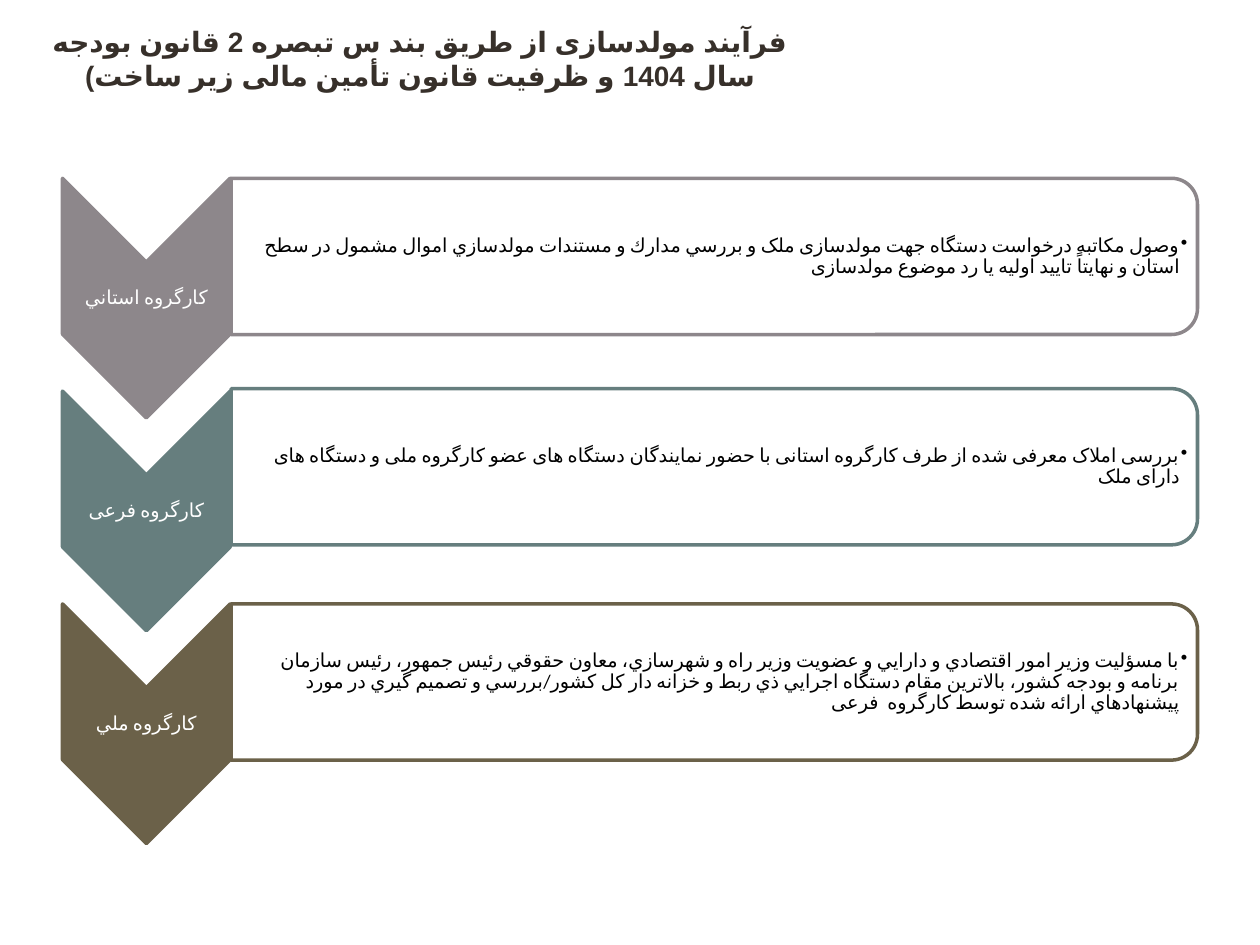
from lxml.etree import SubElement
from pptx import Presentation
from pptx.dml.color import RGBColor
from pptx.enum.lang import MSO_LANGUAGE_ID as Language
from pptx.enum.shapes import MSO_SHAPE as Shape
from pptx.enum.text import MSO_ANCHOR as Anchor, MSO_AUTO_SIZE as AutoSize, PP_ALIGN as Align
from pptx.oxml.ns import qn
from pptx.util import Cm, Pt

TITLE = "فرآیند مولدسازی از طریق بند س تبصره 2 قانون بودجه سال 1404 و ظرفیت قانون تأمین مالی زیر ساخت)"
STAGES = [
    ("كارگروه استاني", "8D878B", 5.17,
     "وصول مکاتبه درخواست دستگاه جهت مولدسازی ملک و بررسي مدارك و مستندات مولدسازي "
     "اموال مشمول در سطح استان و نهایتاً تایید اولیه یا رد موضوع مولدسازی"),
    ("کارگروه فرعی", "667E7E", 9.41,
     "بررسی املاک معرفی شده از طرف کارگروه استانی با حضور نمایندگان دستگاه های عضو "
     "کارگروه ملی و دستگاه های دارای ملک"),
    ("كارگروه ملي", "6B6149", 13.75,
     "با مسؤليت وزير امور اقتصادي و دارايي و عضويت وزير راه و شهرسازي، معاون حقوقي "
     "رئيس جمهور، رئيس سازمان برنامه و بودجه كشور، بالاترين مقام دستگاه اجرايي ذي ربط "
     "و خزانه دار كل كشور/بررسي و تصميم گيري در مورد پيشنهادهاي ارائه شده توسط كارگروه  فرعی"),
]
FIRST_CHEVRON_Y, CHEVRON_PITCH = 6.01, 4.29


def color(hex_value):
    """Turn a hex string into a colour."""
    return RGBColor.from_string(hex_value)


def centered(x, y, width, height):
    """Return the frame around a centre point given in centimetres."""
    return Cm(x - width / 2), Cm(y - height / 2), Cm(width), Cm(height)


def write_rtl(paragraph, text, font_name, size, hex_value, align, bold=False):
    """Write one right-to-left Persian run into a paragraph."""
    paragraph.alignment = align
    paragraph._p.get_or_add_pPr().set("rtl", "1")
    run = paragraph.add_run()
    run.text = text
    run.font.name = font_name
    run.font.size = Pt(size)
    run.font.bold = bold
    run.font.language_id = Language.FARSI
    run.font.color.rgb = color(hex_value)
    SubElement(run._r.get_or_add_rPr(), qn("a:cs"), typeface=font_name)


def add_bullet(paragraph):
    """Give a paragraph a hanging bullet."""
    properties = paragraph._p.get_or_add_pPr()
    properties.set("marL", str(Cm(0.16)))
    properties.set("indent", str(Cm(-0.16)))
    SubElement(properties, qn("a:buChar"), char="•")


def add_outline(group, preset, frame, fill, line, opacity=100):
    """Add a preset shape turned a quarter clockwise."""
    outline = group.shapes.add_shape(preset, *frame)
    outline.rotation = 90
    outline.shadow.inherit = False
    outline.fill.solid()
    outline.fill.fore_color.rgb = color(fill)
    outline.line.color.rgb = color(line)
    outline.line.width = Pt(2)
    if opacity < 100:
        tint = outline._element.spPr.find(qn("a:solidFill"))[0]
        SubElement(tint, qn("a:alpha"), val=str(opacity * 1000))


def add_caption(group, frame, text, hex_value, align, bulleted=False):
    """Add the text that belongs to a chevron or a panel."""
    caption = group.shapes.add_textbox(*frame).text_frame
    caption.word_wrap = True
    caption.vertical_anchor = Anchor.MIDDLE
    caption.margin_left = Cm(0.23 if bulleted else 0.03)
    caption.margin_right = caption.margin_top = caption.margin_bottom = Cm(0.03)
    paragraph = caption.paragraphs[0]
    if bulleted:
        paragraph.level = 1
        add_bullet(paragraph)
    paragraph.line_spacing = 0.9
    write_rtl(paragraph, text, "Calibri", 11, hex_value, align)


def add_title(slide):
    """Place and fill the slide title."""
    title = slide.shapes.title
    title.left, title.top, title.width, title.height = Cm(0.64), Cm(0.5), Cm(15.65), Cm(2.47)
    frame = title.text_frame
    frame.auto_size = AutoSize.NONE
    frame.word_wrap = True
    frame.vertical_anchor = Anchor.TOP
    frame.margin_top = 0
    write_rtl(frame.paragraphs[0], TITLE, "Arial", 16, "37302A", Align.CENTER, bold=True)


def add_stage(group, chevron_y, panel_y, name, accent, duty):
    """Add a chevron with its name and the panel with its duty."""
    add_outline(group, Shape.CHEVRON, centered(2.95, chevron_y, 4.83, 3.38), accent, accent)
    add_caption(group, centered(2.95, chevron_y, 3.38, 1.45), name, "FFFFFF", Align.CENTER)
    add_outline(group, Shape.ROUND_2_SAME_RECTANGLE,
                centered(14.4, panel_y, 3.15, 19.48), "FFFFFF", accent, opacity=90)
    add_caption(group, centered(14.31, panel_y, 19.33, 2.84), duty, "000000",
                Align.RIGHT, bulleted=True)


def main():
    """Build the slide and save it."""
    deck = Presentation()
    deck.slide_width, deck.slide_height = Cm(25.4), Cm(19.05)
    slide = deck.slides.add_slide(deck.slide_layouts[5])
    add_title(slide)
    process = slide.shapes.add_group_shape()
    for index, (name, accent, panel_y, duty) in enumerate(STAGES):
        chevron_y = FIRST_CHEVRON_Y + index * CHEVRON_PITCH
        add_stage(process, chevron_y, panel_y, name, accent, duty)
    deck.save("out.pptx")


if __name__ == "__main__":
    main()
